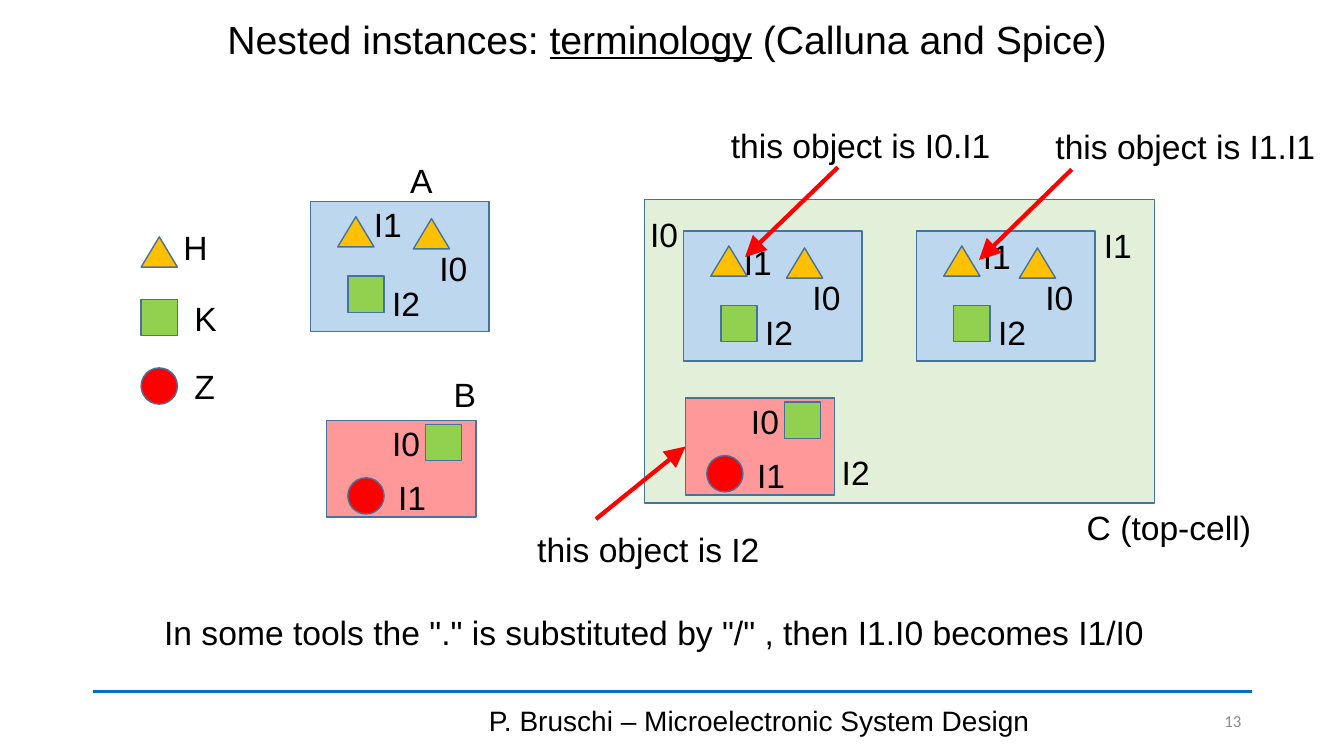
from pptx import Presentation
from pptx.dml.color import RGBColor as RGB
from pptx.enum.shapes import MSO_CONNECTOR as Link, MSO_SHAPE as Form
from pptx.enum.text import MSO_ANCHOR as Anchor, MSO_AUTO_SIZE as Fit, PP_ALIGN as Align
from pptx.oxml.ns import qn
from pptx.util import Emu, Pt
from lxml.etree import SubElement

PX = 9144  # 100 px to the inch
BLACK = RGB(0x00, 0x00, 0x00)
GREY = RGB(0x8C, 0x8C, 0x8C)
EDGE = RGB(0x43, 0x73, 0x9E)
RULE = RGB(0x00, 0x70, 0xC0)
GOLD = RGB(0xFF, 0xC0, 0x00)
GREEN = RGB(0x92, 0xD0, 0x50)
RED = RGB(0xFF, 0x00, 0x00)
BLUE = RGB(0xBD, 0xD7, 0xEE)
PINK = RGB(0xFF, 0x99, 0x99)
PALE = RGB(0xE2, 0xF0, 0xD9)


def px(*nums):
    return [Emu(n * PX) for n in nums]


class Sheet:
    def __init__(self, slide):
        self.shapes = slide.shapes
        self.font = "Arial"
        self.size = 24

    def shape(self, form, fill, x, y, w, h):
        item = self.shapes.add_shape(form, *px(x, y, w, h))
        item.shadow.inherit = False
        item.fill.solid()
        item.fill.fore_color.rgb = fill
        item.line.color.rgb = EDGE
        item.line.width = Pt(1)
        return item

    def style(self, para, size, font, color):
        para.font.size = Pt(size)
        para.font.name = font
        para.font.color.rgb = color

    def label(self, text, x, y, w=48):
        """Add a one-line label that does not wrap."""
        frame = self.shapes.add_textbox(*px(x, y, w, 50)).text_frame
        frame.word_wrap = False
        frame.auto_size = Fit.SHAPE_TO_FIT_TEXT
        para = frame.paragraphs[0]
        para.text = text
        self.style(para, self.size, self.font, BLACK)

    def block(self, text, x, y, w, h, size, align=Align.CENTER, font=None, color=BLACK):
        """Add wrapped text, centred in height, and return its paragraph."""
        frame = self.shapes.add_textbox(*px(x, y, w, h)).text_frame
        frame.word_wrap = True
        frame.vertical_anchor = Anchor.MIDDLE
        para = frame.paragraphs[0]
        para.text = text
        para.alignment = align
        self.style(para, size, font or self.font, color)
        return para

    def line(self, start, end, color, width):
        link = self.shapes.add_connector(Link.STRAIGHT, *px(*start, *end))
        link.line.color.rgb = color
        link.line.width = Pt(width)
        SubElement(link._element.spPr, qn("a:effectLst"))
        return link

    def arrow(self, start, end):
        link = self.line(start, end, RED, 3)
        SubElement(link.line._get_or_add_ln(), qn("a:tailEnd"),
                   type="triangle", w="lg", len="lg")
        return link

    def part_h(self, x, y):
        self.shape(Form.ISOSCELES_TRIANGLE, GOLD, x, y, 36, 30)

    def part_k(self, x, y):
        self.shape(Form.RECTANGLE, GREEN, x, y, 36, 36)

    def part_z(self, x, y):
        self.shape(Form.OVAL, RED, x, y, 36, 36)

    def cell_a(self, x, y, dx, dy):
        """Draw cell A; dx and dy place its I1 label."""
        self.shape(Form.RECTANGLE, BLUE, x, y, 177, 129)
        self.part_h(x + 27, y + 15)
        self.part_h(x + 102, y + 17)
        self.part_k(x + 37, y + 74)
        self.label("I0", x + 118, y + 41)
        self.label("I1", x + dx, y + dy)
        self.label("I2", x + 71, y + 76)

    def cell_b(self, x, y):
        box = self.shape(Form.RECTANGLE, PINK, x, y, 148, 96)
        self.part_z(x + 21, y + 57)
        self.part_k(x + 98, y + 4)
        self.label("I0", x + 55, y - 2)
        self.label("I1", x + 61, y + 51)
        return box


def main():
    deck = Presentation()
    deck.slide_width, deck.slide_height = px(1333, 750)
    sheet = Sheet(deck.slides.add_slide(deck.slide_layouts[6]))

    # Frame of the slide
    sheet.line((92, 686), (1242, 686), RULE, 2.75)
    title = sheet.block("Nested instances: ", 92, 5, 1150, 72, 28)
    title.line_spacing = 0.9
    term = title.add_run()
    term.text = "terminology"
    term.font.underline = True
    title.add_run().text = " (Calluna and Spice) "
    sheet.block("P. Bruschi – Microelectronic System Design", 442, 695, 622, 40, 20)
    sheet.block("13", 1145, 695, 96, 40, 12, Align.RIGHT, "Calibri", GREY)

    # Legend
    sheet.part_h(140, 235)
    sheet.part_k(140, 297)
    sheet.part_z(140, 365)
    sheet.label("H", 172, 220, 45)
    sheet.label("K", 183, 291, 43)
    sheet.label("Z", 183, 358, 41)

    # Cells A and B
    sheet.cell_a(308, 200, 53, -3)
    sheet.label("A", 397, 154, 43)
    sheet.cell_b(324, 417)
    sheet.label("B", 440, 366, 43)

    # Top cell C and its instances
    sheet.shape(Form.RECTANGLE, PALE, 639, 198, 506, 301)
    sheet.cell_a(678, 229, 50, 6)
    sheet.cell_a(909, 229, 56, 0)
    inst = sheet.cell_b(680, 395)
    sheet.label("I0", 635, 207)
    sheet.label("I1", 1085, 218)
    sheet.label("I2", 825, 443)
    sheet.label("C (top-cell)", 1068, 498, 185)

    # Callouts
    sheet.arrow((831, 166), (739, 255))
    sheet.label("this object is I0.I1", 715, 119, 280)
    sheet.arrow((1063, 168), (971, 258))
    sheet.label("this object is I1.I1", 1037, 120, 280)
    sheet.arrow((591, 515), (680, 443)).end_connect(inst, 1)
    sheet.label("this object is I2", 523, 520, 243)
    sheet.label('In some tools the "." is substituted by "/" , then I1.I0 becomes I1/I0',
                153, 602, 1001)

    deck.save("out.pptx")


if __name__ == "__main__":
    main()
